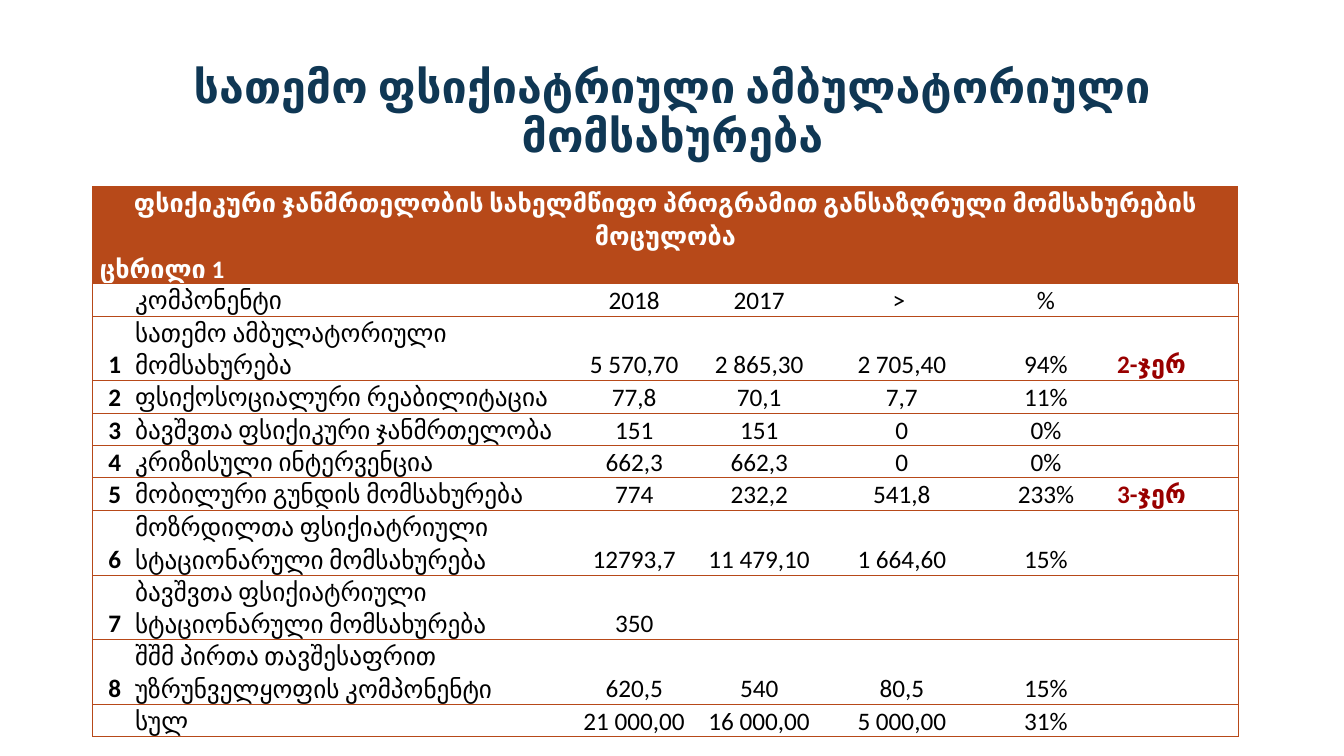
from pptx import Presentation
from pptx.dml.color import RGBColor
from pptx.enum.text import MSO_ANCHOR as Anchor, PP_ALIGN as Align
from pptx.oxml.ns import qn
from pptx.util import Inches, Pt
from lxml.etree import SubElement

COLORS = {"title": "0F3754", "header": "B74919", "white": "FFFFFF",
          "body": "000000", "growth": "990000"}

HEADER = ["ფსიქიკური ჯანმრთელობის სახელმწიფო პროგრამით განსაზღრული მომსახურების მოცულობა",
          "ცხრილი 1"]
ROWS = [
    ["", "კომპონენტი", "2018", "2017", "> ", "%", ""],
    ["1", "სათემო ამბულატორიული მომსახურება", "5 570,70", "2 865,30", "2 705,40", "94%", "2-ჯერ"],
    ["2", "ფსიქოსოციალური რეაბილიტაცია", "77,8", "70,1", "7,7", "11%", ""],
    ["3", "ბავშვთა ფსიქიკური ჯანმრთელობა", "151", "151", "0", "0%", ""],
    ["4", "კრიზისული ინტერვენცია", "662,3", "662,3", "0", "0%", ""],
    ["5", "მობილური გუნდის მომსახურება", "774", "232,2", "541,8", "233%", "3-ჯერ"],
    ["6", "მოზრდილთა ფსიქიატრიული სტაციონარული მომსახურება",
     "12793,7", "11 479,10", "1 664,60", "15%", ""],
    ["7", "ბავშვთა ფსიქიატრიული სტაციონარული მომსახურება", "350", "", "", "", ""],
    ["8", "შშმ პირთა თავშესაფრით უზრუნველყოფის კომპონენტი",
     "620,5", "540", "80,5", "15%", ""],
    ["", "სულ", "21 000,00", "16 000,00", "5 000,00", "31%", ""],
]
WIDTHS = [0.35, 4.4, 1.24, 1.24, 1.59, 1.27, 1.27]
HEIGHTS = [0.69] + [0.22] * 6 + [0.35] * 3 + [0.22]
ALIGNS = [Align.RIGHT, Align.LEFT] + [Align.CENTER] * 4 + [Align.LEFT]
LAST = len(WIDTHS) - 1


def write(para, text, align, spacing, size, color, bold):
    para.alignment = align
    para.line_spacing = spacing
    target = para
    if text:
        target = para.add_run()
        target.text = text
    font_format = {"name": "Calibri", "size": Pt(size), "bold": bold}
    for name, value in font_format.items():
        setattr(target.font, name, value)
    target.font.color.rgb = RGBColor.from_string(COLORS[color])


def frame_cell(cell, column):
    cell_format = {"vertical_anchor": Anchor.BOTTOM,
                   "margin_left": Inches(0.07), "margin_right": Inches(0.07),
                   "margin_top": 0, "margin_bottom": 0}
    for name, value in cell_format.items():
        setattr(cell, name, value)
    properties = cell._tc.get_or_add_tcPr()
    visible = {"a:lnL": column == 0, "a:lnR": column == LAST,
               "a:lnT": True, "a:lnB": True}
    for edge, shown in visible.items():
        line = SubElement(properties, qn(edge), w=str(Pt(0.5)))
        if shown:
            fill = SubElement(line, qn("a:solidFill"))
            SubElement(fill, qn("a:srgbClr"), val=COLORS["header"])
        else:
            SubElement(line, qn("a:noFill"))


deck = Presentation()
deck.slide_width = Inches(13.33)
deck.slide_height = Inches(7.5)
page = deck.slides.add_slide(deck.slide_layouts[6])

title = page.shapes.add_textbox(Inches(0.92), Inches(0.4), Inches(11.5), Inches(1.45)).text_frame
title.word_wrap = True
title.vertical_anchor = Anchor.MIDDLE
write(title.paragraphs[0], "სათემო ფსიქიატრიული ამბულატორიული მომსახურება",
      Align.CENTER, 0.9, 32, "title", True)

table = page.shapes.add_table(len(HEIGHTS), len(WIDTHS), Inches(0.92), Inches(1.85),
                              Inches(sum(WIDTHS)), Inches(sum(HEIGHTS))).table
table.first_row = False
table.horz_banding = False
for column, width in zip(table.columns, WIDTHS):
    column.width = Inches(width)
for row, height in zip(table.rows, HEIGHTS):
    row.height = Inches(height)

header = table.cell(0, 0)
header.merge(table.cell(0, LAST))
for column in range(len(WIDTHS)):
    cell = table.cell(0, column)
    frame_cell(cell, column)
    cell.fill.solid()
    cell.fill.fore_color.rgb = RGBColor.from_string(COLORS["header"])
caption = header.text_frame.paragraphs[0]
caption.space_before = Pt(2)
write(caption, HEADER[0], Align.CENTER, 1.07, 18, "white", True)
write(header.text_frame.add_paragraph(), HEADER[1], Align.LEFT, 1.07, 18, "white", True)

for row, texts in enumerate(ROWS, start=1):
    for column, text in enumerate(texts):
        cell = table.cell(row, column)
        frame_cell(cell, column)
        cell.fill.background()
        color = "growth" if column == LAST else "body"
        write(cell.text_frame.paragraphs[0], text, ALIGNS[column], 1.07, 18,
              color, column in (0, LAST))

deck.save("out.pptx")
